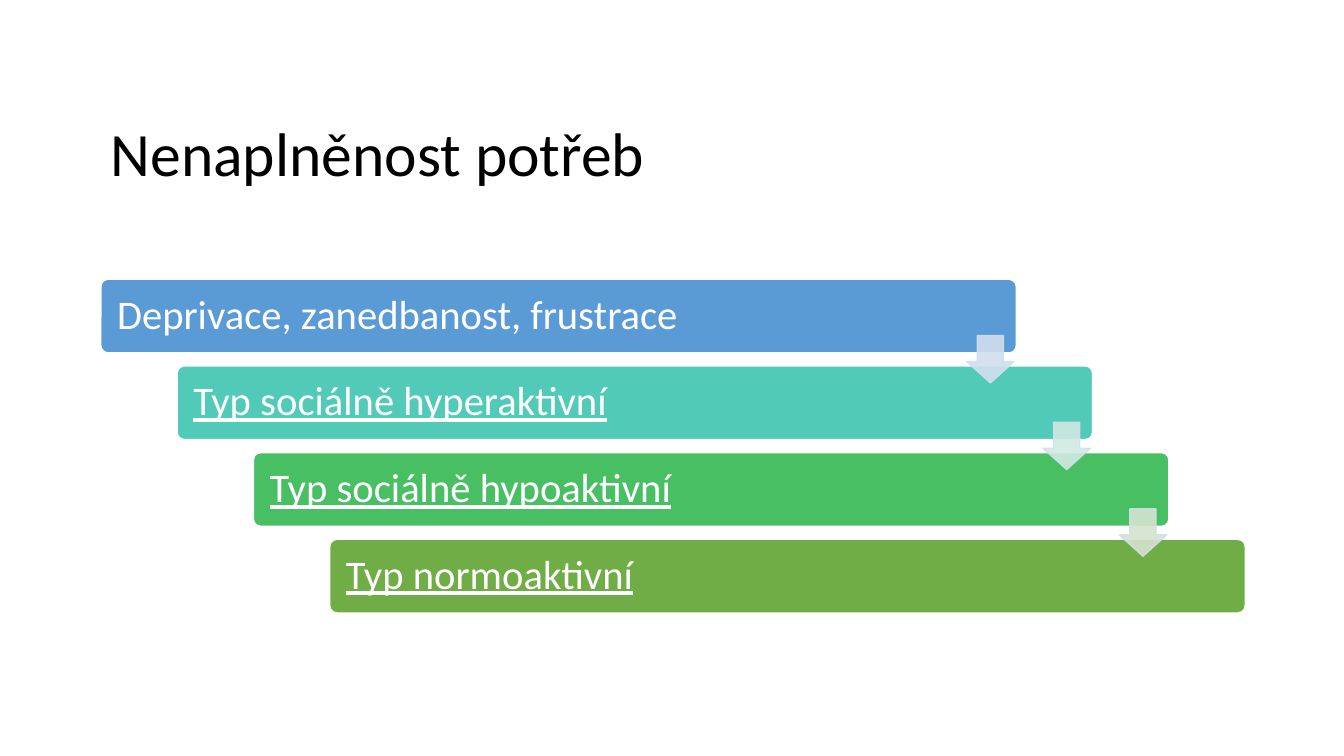
from dataclasses import dataclass

from lxml import etree
from pptx import Presentation
from pptx import util as u
from pptx.dml.color import RGBColor
from pptx.enum import shapes, text
from pptx.oxml.ns import qn

WHITE = RGBColor(0xFF, 0xFF, 0xFF)
BLACK = RGBColor(0x00, 0x00, 0x00)
BLUE = RGBColor(0x5B, 0x9B, 0xD5)
TEAL = RGBColor(0x52, 0xCA, 0xB8)
GREEN = RGBColor(0x49, 0xBF, 0x64)
OLIVE = RGBColor(0x70, 0xAD, 0x47)
PALE_BLUE = RGBColor(0xD2, 0xDE, 0xEF)
PALE_TEAL = RGBColor(0xD0, 0xEA, 0xE1)
PALE_GREEN = RGBColor(0xD5, 0xE3, 0xCF)

GRID_LEFT, GRID_TOP = 1, 2.77
COLUMN, ROW = 2.27 / 3, 0.86
BAR_COLUMNS, BAR_ROWS = 12, 0.85
ARROW_COLUMN, ARROW_ROW = 11.35, 0.65
ARROW_SIZE = 0.47
ARROW_OPACITY = 90


@dataclass(frozen=True)
class Step:
    label: str
    color: RGBColor
    underline: bool = True


STEPS = [
    Step("Deprivace, zanedbanost, frustrace", BLUE, underline=False),
    Step("Typ sociálně hyperaktivní", TEAL),
    Step("Typ sociálně hypoaktivní", GREEN),
    Step("Typ normoaktivní", OLIVE),
]
ARROW_COLORS = [PALE_BLUE, PALE_TEAL, PALE_GREEN]


def grid_position(column: float, row: float) -> tuple[int, int]:
    return u.Inches(GRID_LEFT + column * COLUMN), u.Inches(GRID_TOP + row * ROW)


def write_text(shape, words: str, *, size: float, color: RGBColor,
               underline: bool = False, inset: float = 0.1) -> None:
    frame = shape.text_frame
    frame.word_wrap = True
    frame.vertical_anchor = text.MSO_ANCHOR.MIDDLE
    frame.margin_left = frame.margin_right = u.Inches(inset)
    frame.margin_top = frame.margin_bottom = u.Inches(0.05)
    paragraph = frame.paragraphs[0]
    paragraph.alignment = text.PP_ALIGN.LEFT
    paragraph.line_spacing = 0.9
    run = paragraph.add_run()
    run.text = words
    run.font.name = "Calibri"
    run.font.size = u.Pt(size)
    run.font.color.rgb = color
    run.font.underline = underline


def add_filled_shape(slide, kind, box: tuple, adjustments: list[float],
                     fill: RGBColor, line: RGBColor):
    shape = slide.shapes.add_shape(kind, *box)
    shape.shadow.inherit = False
    for index, value in enumerate(adjustments):
        shape.adjustments[index] = value
    shape.fill.solid()
    shape.fill.fore_color.rgb = fill
    shape.line.color.rgb = line
    shape.line.width = u.Pt(1)
    return shape


def set_opacity(shape, percent: int) -> None:
    for color in shape.element.spPr.iter(qn("a:srgbClr")):
        etree.SubElement(color, qn("a:alpha")).set("val", str(percent * 1000))


def add_bar(slide, index: int, step: Step) -> None:
    box = (*grid_position(index, index),
           u.Inches(BAR_COLUMNS * COLUMN), u.Inches(BAR_ROWS * ROW))
    bar = add_filled_shape(slide, shapes.MSO_SHAPE.ROUNDED_RECTANGLE, box,
                           [0.1], step.color, WHITE)
    write_text(bar, step.label, size=29, color=WHITE,
               underline=step.underline, inset=0.14)


def add_arrow(slide, index: int, color: RGBColor) -> None:
    box = (*grid_position(index + ARROW_COLUMN, index + ARROW_ROW),
           u.Inches(ARROW_SIZE), u.Inches(ARROW_SIZE))
    arrow = add_filled_shape(slide, shapes.MSO_SHAPE.DOWN_ARROW, box,
                             [0.55, 0.45], color, PALE_BLUE)
    arrow.adjustments[0], arrow.adjustments[1] = 0.55, 0.45
    set_opacity(arrow, ARROW_OPACITY)


def main() -> None:
    presentation = Presentation()
    presentation.slide_width = u.Inches(13.33)
    presentation.slide_height = u.Inches(7.5)
    slide = presentation.slides.add_slide(presentation.slide_layouts[6])

    title = slide.shapes.add_textbox(u.Inches(GRID_LEFT), u.Inches(0.68),
                                     u.Inches(11.33), u.Inches(1.75))
    write_text(title, "Nenaplněnost potřeb", size=44, color=BLACK)

    for index, step in enumerate(STEPS):
        add_bar(slide, index, step)
    for index, color in enumerate(ARROW_COLORS):
        add_arrow(slide, index, color)

    presentation.save("out.pptx")


if __name__ == "__main__":
    main()
